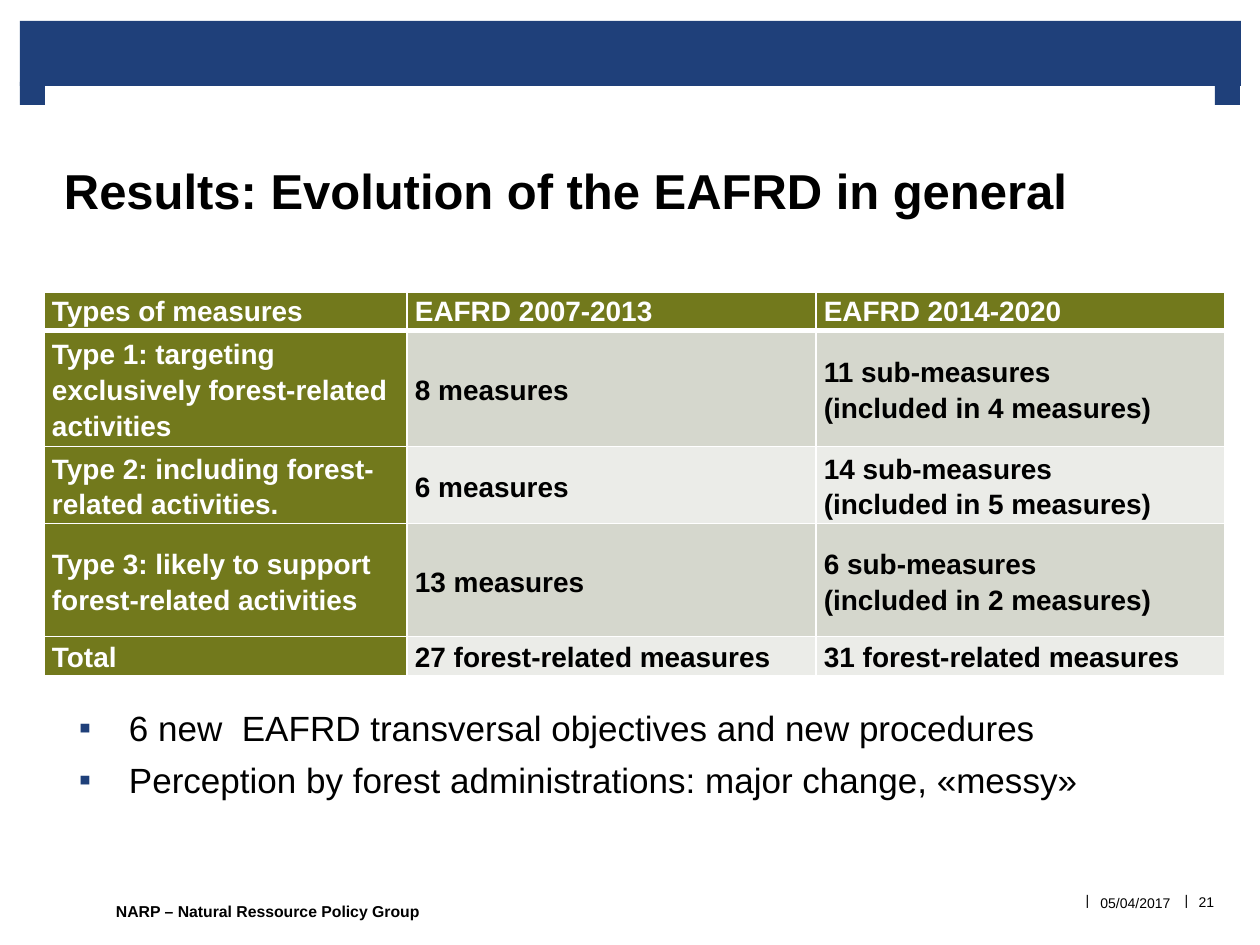
from lxml.etree import SubElement as Sub
from pptx import Presentation
from pptx.dml.color import RGBColor
from pptx.enum.shapes import MSO_SHAPE as Shape
from pptx.enum.text import MSO_ANCHOR as Anchor, PP_ALIGN as Align
from pptx.oxml.ns import qn
from pptx.util import Emu, Pt

BLUE = RGBColor(0x1F, 0x40, 0x7A)
OLIVE = RGBColor(0x72, 0x79, 0x1C)
GREY = RGBColor(0xD5, 0xD7, 0xCD)
PALE = RGBColor(0xEB, 0xEC, 0xE8)
WHITE = RGBColor(0xFF, 0xFF, 0xFF)
BLACK = RGBColor(0, 0, 0)


def px(*vals):
    return [Emu(round(v * 914400 / 126)) for v in vals]


def style(par, size, bold=False, color=BLACK):
    font = par.font
    font.name, font.size, font.bold = "Arial", Pt(size), bold
    font.color.rgb = color


prs = Presentation()
prs.slide_width, prs.slide_height = px(1260, 945)
slide = prs.slides.add_slide(prs.slide_layouts[6])
shapes = slide.shapes

# Blue header bracket
for box in [(20, 21, 1221, 65), (20, 82, 25, 23), (1215, 82, 25, 23)]:
    bar = shapes.add_shape(Shape.RECTANGLE, *px(*box))
    bar.shadow.inherit = False
    bar.fill.solid()
    bar.fill.fore_color.rgb = BLUE
    bar.line.fill.background()

# Title and footer: text, box, size, bold, align, anchor, wrap, side inset
MID = Anchor.MIDDLE
texts = [
    ("Results: Evolution of the EAFRD in general",
     (45, 86, 1170, 133), 28, True, Align.LEFT, Anchor.BOTTOM, True, 19),
    ("NARP – Natural Ressource Policy Group",
     (116, 880, 515, 63), 9, True, Align.LEFT, MID, True, 0),
    ("|", (1080, 868, 15, 64), 8, False, Align.CENTER, MID, False, 5),
    ("05/04/2017", (1093, 871, 85, 64), 8, False, Align.CENTER, MID, False, 0),
    ("|", (1179, 868, 15, 64), 8, False, Align.CENTER, MID, False, 5),
    ("21", (1188, 870, 37, 64), 8, False, Align.CENTER, MID, False, 0),
]
for text, box, size, bold, align, anchor, wrap, inset in texts:
    frame = shapes.add_textbox(*px(*box)).text_frame
    frame.word_wrap, frame.vertical_anchor = wrap, anchor
    frame.margin_left, frame.margin_right = px(inset, inset)
    frame.margin_top = frame.margin_bottom = 0
    par = frame.paragraphs[0]
    par.text, par.alignment = text, align
    style(par, size, bold)

# Table of measures
rows = [
    ("Types of measures", "EAFRD 2007-2013", "EAFRD 2014-2020"),
    ("Type 1: targeting exclusively forest-related activities",
     "8 measures", "11 sub-measures\n(included in 4 measures)"),
    ("Type 2: including forest-related activities.",
     "6 measures", "14 sub-measures\n(included in 5 measures)"),
    ("Type 3: likely to support forest-related activities",
     "13 measures", "6 sub-measures\n(included in 2 measures)"),
    ("Total", "27 forest-related measures", "31 forest-related measures"),
]
table = shapes.add_table(5, 3, *px(44, 292, 1181, 378)).table
for col, wide in zip(table.columns, px(363, 409, 409)):
    col.width = wide
for row, high in zip(table.rows, px(38, 113, 76, 113, 38)):
    row.height = high

for r, row in enumerate(rows):
    for c, text in enumerate(row):
        cell = table.cell(r, c)
        head = r == 0 or c == 0
        cell.text = text
        cell.vertical_anchor = Anchor.MIDDLE if r else Anchor.TOP
        cell.margin_left, cell.margin_right = px(8, 8)
        cell.margin_top = cell.margin_bottom = 0
        for par in cell.text_frame.paragraphs:
            par.line_spacing = 1.15
            style(par, 16, True, WHITE if head else BLACK)
        # White borders, thicker under the header row
        props = cell._tc.get_or_add_tcPr()
        for side in "LRTB":
            thick = (r, side) in [(0, "B"), (1, "T")]
            line = Sub(props, qn(f"a:ln{side}"), w=str(Pt(3 if thick else 1)))
            fill = Sub(line, qn("a:solidFill"))
            Sub(fill, qn("a:srgbClr"), val=str(WHITE))
        cell.fill.solid()
        cell.fill.fore_color.rgb = OLIVE if head else GREY if r % 2 else PALE

# Bullets
points = [
    "6 new  EAFRD transversal objectives and new procedures",
    "Perception by forest administrations: major change, «messy»",
]
frame = shapes.add_textbox(*px(60, 706, 1095, 180)).text_frame
frame.word_wrap = True
frame.margin_left, frame.margin_right = px(19, 0)
frame.margin_top = frame.margin_bottom = 0
hang = px(50)[0]
for i, text in enumerate(points):
    par = frame.add_paragraph() if i else frame.paragraphs[0]
    par.text = text
    if i:
        par.space_before = Pt(6)
    props = par._p.get_or_add_pPr()
    props.set("marL", str(hang))
    props.set("indent", str(-hang))
    tint = Sub(props, qn("a:buClr"))
    Sub(tint, qn("a:srgbClr"), val=str(BLUE))
    Sub(props, qn("a:buFont"), typeface="Arial")
    Sub(props, qn("a:buChar"), char="▪")
    style(par, 20)

prs.save("out.pptx")
